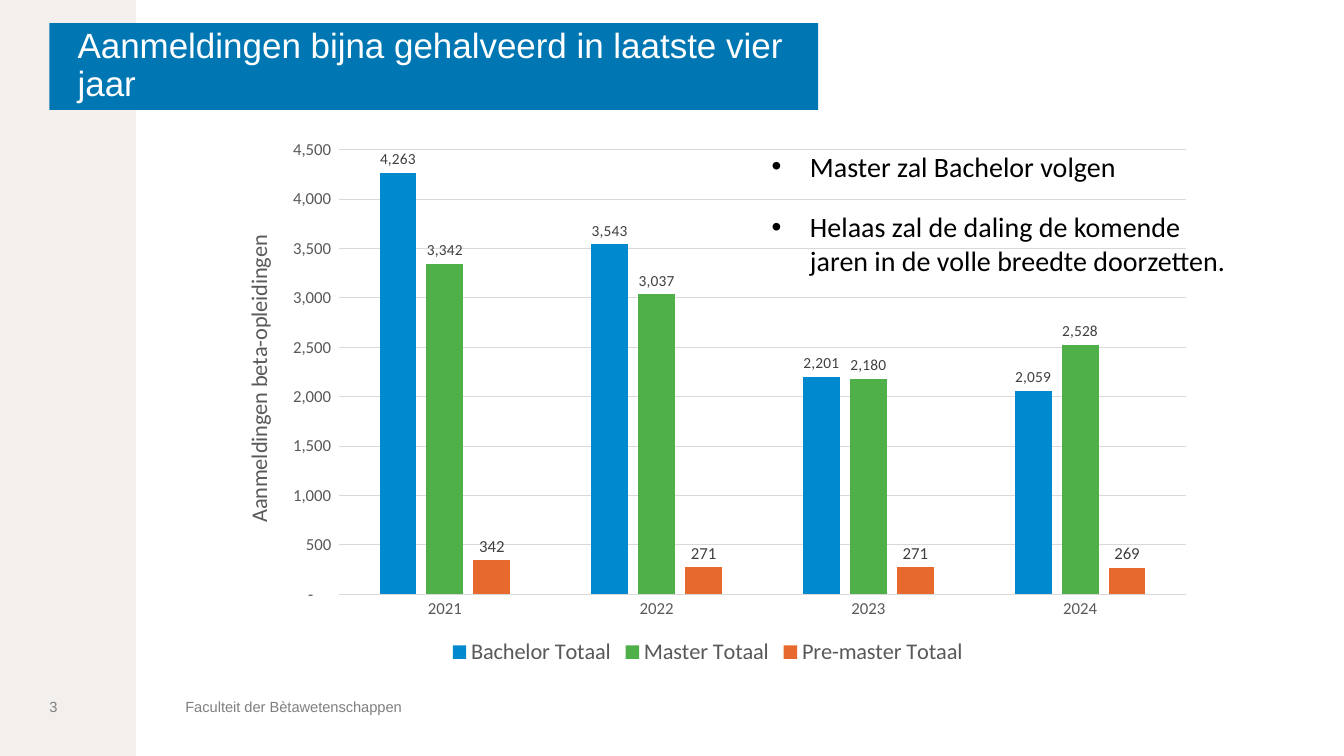
from lxml import etree
from pptx import Presentation
from pptx.chart.data import CategoryChartData
from pptx.dml.color import RGBColor
from pptx.enum.chart import XL_CHART_TYPE, XL_LABEL_POSITION, XL_LEGEND_POSITION, XL_TICK_MARK
from pptx.enum.shapes import MSO_SHAPE
from pptx.enum.text import MSO_ANCHOR, MSO_AUTO_SIZE, PP_ALIGN
from pptx.oxml import parse_xml
from pptx.oxml.ns import nsdecls, qn
from pptx.util import Inches, Pt

COLORS = {
    "band": "F2EFED", "title": "0077B3", "white": "FFFFFF", "black": "000000",
    "footer": "7F7F7F", "axis": "595959", "label": "404040", "grid": "D9D9D9",
}
NUMBER_FORMAT = '_(* #,##0_);_(* \\(#,##0\\);_(* "-"??_);_('
YEARS = ["2021", "2022", "2023", "2024"]
# name, values, fill colour, label size
SERIES = [
    ("Bachelor Totaal", (4263, 3543, 2201, 2059), "0089CF", 11),
    ("Master Totaal", (3342, 3037, 2180, 2528), "4FAF48", 11),
    ("Pre-master Totaal", (342, 271, 271, 269), "E8692D", 12),
]


def color(name):
    return RGBColor.from_string(COLORS[name])


def style_font(font, size, name, color_name):
    font.size = Pt(size)
    font.name = name
    font.bold = False
    font.color.rgb = color(color_name)


def place(shape, left, top, width, height):
    shape.left, shape.top = Inches(left), Inches(top)
    shape.width, shape.height = Inches(width), Inches(height)


def set_frame(frame, margins, anchor):
    frame.word_wrap = True
    frame.auto_size = MSO_AUTO_SIZE.NONE
    frame.vertical_anchor = anchor
    frame.margin_left, frame.margin_top, frame.margin_right, frame.margin_bottom = (
        Inches(margin) for margin in margins)


def add_band(page):
    band = page.shapes.add_shape(
        MSO_SHAPE.RECTANGLE, 0, 0, Inches(1.35), Inches(7.5))
    band.shadow.inherit = False
    band.fill.solid()
    band.fill.fore_color.rgb = color("band")
    band.line.fill.background()
    return band


def fill_title(title, text):
    place(title, 0.49, 0.23, 7.63, 0.86)
    title.fill.solid()
    title.fill.fore_color.rgb = color("title")
    frame = title.text_frame
    frame.text = text
    set_frame(frame, (0.28, 0, 0.24, 0), MSO_ANCHOR.MIDDLE)
    para = frame.paragraphs[0]
    para.alignment = PP_ALIGN.LEFT
    para.line_spacing = 0.9
    style_font(para.runs[0].font, 25, "Arial", "white")


def fill_bullet(body, text, position):
    place(body, *position)
    frame = body.text_frame
    frame.text = text
    set_frame(frame, (0.1, 0.05, 0.1, 0.05), MSO_ANCHOR.TOP)
    para = frame.paragraphs[0]
    para.space_before = Pt(0)
    properties = para._p.get_or_add_pPr()
    properties.set("marL", str(Inches(0.38)))
    properties.set("indent", str(-Inches(0.38)))
    bullet_font = etree.SubElement(properties, qn("a:buFont"))
    bullet_font.set("typeface", "Arial")
    etree.SubElement(properties, qn("a:buChar")).set("char", "•")
    style_font(para.runs[0].font, 20, "Calibri", "black")


def add_footer(page, text, left, width):
    box = page.shapes.add_textbox(
        Inches(left), Inches(6.52), Inches(width), Inches(0.98))
    frame = box.text_frame
    frame.text = text
    set_frame(frame, (0, 0, 0, 0), MSO_ANCHOR.MIDDLE)
    style_font(frame.paragraphs[0].runs[0].font, 10.5, "Arial", "footer")


def manual_layout(inner=False, **fractions):
    target = '<c:layoutTarget val="inner"/>' if inner else ""
    modes = "".join(f'<c:{key}Mode val="edge"/>' for key in ("x", "y"))
    values = "".join(f'<c:{key} val="{value}"/>' for key, value in fractions.items())
    return parse_xml(f'<c:layout {nsdecls("c")}><c:manualLayout>'
                     f'{target}{modes}{values}</c:manualLayout></c:layout>')


def set_layout(element, layout, position):
    for old in element.findall(qn("c:layout")):
        element.remove(old)
    element.insert(position, layout)


def format_axes(chart):
    years, counts = chart.category_axis, chart.value_axis
    for axis in (years, counts):
        axis.major_tick_mark = axis.minor_tick_mark = XL_TICK_MARK.NONE
        style_font(axis.tick_labels.font, 12, "Calibri", "axis")
    counts.minimum_scale, counts.maximum_scale, counts.major_unit = 0, 4500, 500
    counts.tick_labels.number_format = NUMBER_FORMAT
    counts.tick_labels.number_format_is_linked = False
    counts.format.line.fill.background()
    counts.has_major_gridlines = True
    for line in (years.format.line, counts.major_gridlines.format.line):
        line.color.rgb = color("grid")
        line.width = Pt(0.75)

    frame = counts.axis_title.text_frame
    frame.text = "Aanmeldingen beta-opleidingen"
    style_font(frame.paragraphs[0].runs[0].font, 16, "Calibri", "axis")
    frame._txBody.find(qn("a:bodyPr")).set("rot", "-5400000")
    set_layout(counts.axis_title._element, manual_layout(x=0.03, y=0.19), 1)


def add_applications_chart(page):
    data = CategoryChartData(number_format=NUMBER_FORMAT)
    data.categories = YEARS
    for name, values, _, _ in SERIES:
        data.add_series(name, values)
    graphic = page.shapes.add_chart(
        XL_CHART_TYPE.COLUMN_CLUSTERED,
        Inches(2.08), Inches(1.27), Inches(9.89), Inches(5.38), data)
    chart = graphic.chart
    chart.has_title = False
    style_font(chart.font, 12, "Calibri", "black")
    format_axes(chart)

    # Columns and their labels
    plot = chart.plots[0]
    plot.vary_by_categories = False
    plot.gap_width, plot.overlap = 219, -27
    for series, (_, _, fill, label_size) in zip(plot.series, SERIES):
        series.format.fill.solid()
        series.format.fill.fore_color.rgb = RGBColor.from_string(fill)
        labels = series.data_labels
        labels.show_value = True
        labels.position = XL_LABEL_POSITION.OUTSIDE_END
        labels.number_format = NUMBER_FORMAT
        labels.number_format_is_linked = False
        style_font(labels.font, label_size, "Calibri", "label")

    # Legend and plot area
    chart.has_legend = True
    chart.legend.position = XL_LEGEND_POSITION.BOTTOM
    chart.legend.include_in_layout = False
    style_font(chart.legend.font, 16, "Calibri", "axis")
    plot_area = chart._chartSpace.chart.plotArea
    set_layout(plot_area, manual_layout(True, x=0.13, y=0.04, w=0.85, h=0.82), 0)
    return graphic


def main():
    deck = Presentation()
    deck.slide_width, deck.slide_height = Inches(13.34), Inches(7.5)
    page = deck.slides.add_slide(deck.slide_layouts[3])
    title, second_point, first_point = page.placeholders

    # Background band and chart go behind the text
    for item in (add_applications_chart(page), add_band(page)):
        page.shapes._spTree.insert(2, item._element)

    # Title and points
    fill_title(title, "Aanmeldingen bijna gehalveerd in laatste vier jaar")
    fill_bullet(second_point,
                "Helaas zal de daling de komende jaren in de volle breedte doorzetten.",
                (7.56, 2.03, 4.73, 0.77))
    fill_bullet(first_point, "Master zal Bachelor volgen", (7.56, 1.43, 4.42, 0.44))

    # Footer
    add_footer(page, "Faculteit der Bètawetenschappen", 1.84, 7.57)
    add_footer(page, "3", 0.49, 0.86)

    deck.save("out.pptx")


if __name__ == "__main__":
    main()
